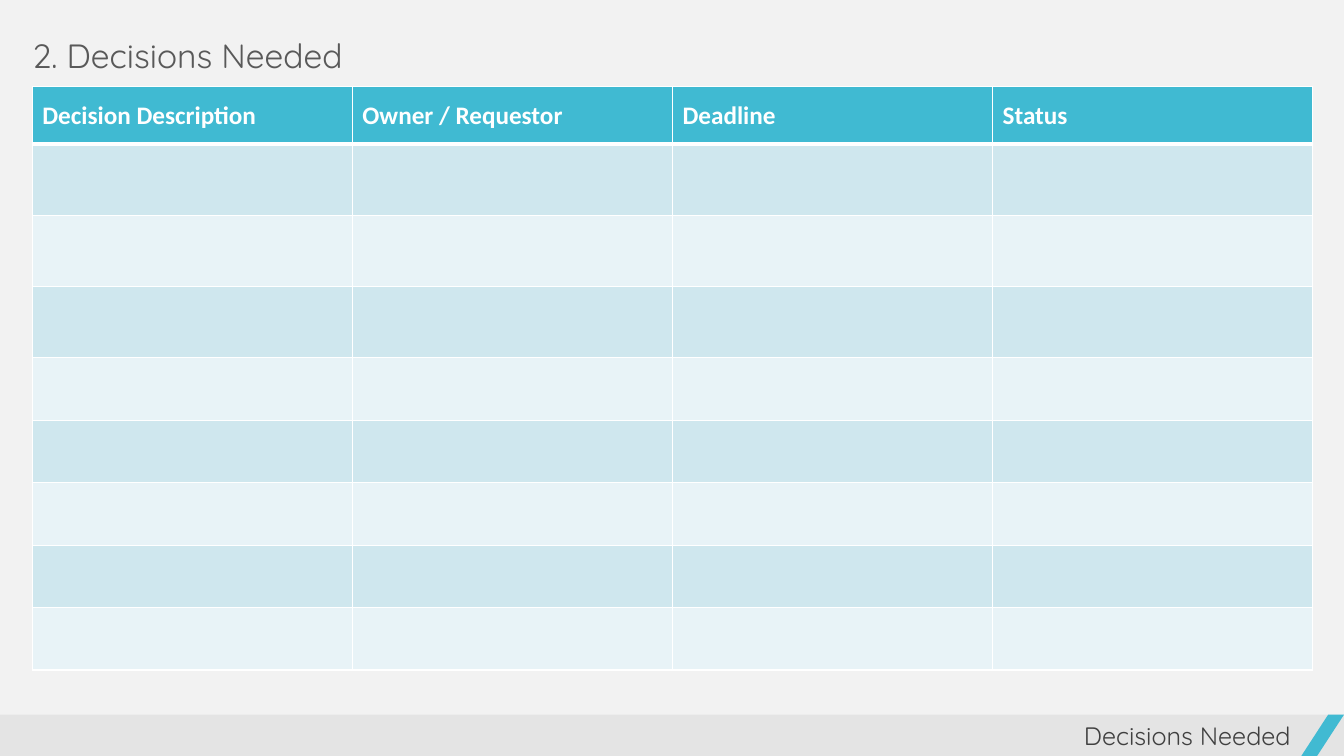
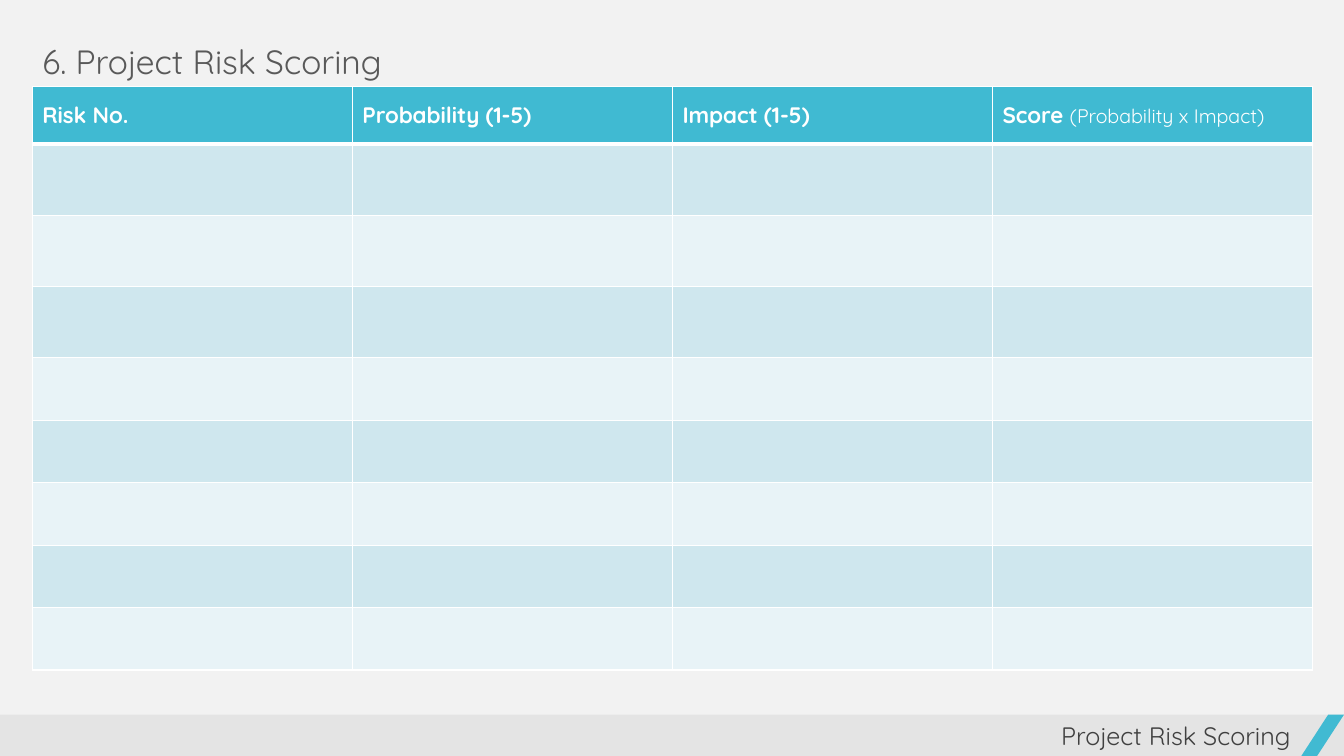
from lxml.etree import SubElement
from pptx import Presentation
from pptx.dml.color import RGBColor
from pptx.enum.shapes import MSO_SHAPE
from pptx.enum.text import MSO_ANCHOR, MSO_AUTO_SIZE, PP_ALIGN
from pptx.oxml.ns import qn
from pptx.util import Inches, Pt

# Shared look
SLIDE_W, SLIDE_H = 13.33, 7.5
BACKGROUND, BAND, ACCENT, WHITE = "F2F2F2", "E4E4E4", "41BAD2", "FFFFFF"
HEADER_FILL, ROW_FILLS = "40BAD2", ("CFE7EE", "E8F3F7")
TITLE_COLOR, FOOTER_COLOR = "595959", "404040"
FONT = "Quicksand"

TITLE_SIZE = (9.84, 0.5)
TABLE_BOX = (0.32, 0.86, 12.7)
ROW_HEIGHTS = [0.57, 0.71, 0.7, 0.71] + [0.62] * 5
FOOTER_BOX = (0, 7.09, SLIDE_W, 0.42)


def rgb(hex_color):
    return RGBColor.from_string(hex_color)


def add_run(paragraph, text, size, color, font=FONT, bold=False):
    run = paragraph.add_run()
    run.text = text
    run.font.name, run.font.size, run.font.bold = font, Pt(size), bold
    run.font.color.rgb = rgb(color)


def add_title(slide, text, left, top):
    title = slide.shapes.title
    title.left, title.top = Inches(left), Inches(top)
    title.width, title.height = (Inches(side) for side in TITLE_SIZE)
    frame = title.text_frame
    frame.word_wrap = True
    frame.auto_size = MSO_AUTO_SIZE.NONE
    frame.vertical_anchor = MSO_ANCHOR.TOP
    frame.paragraphs[0].alignment = PP_ALIGN.LEFT
    add_run(frame.paragraphs[0], text, 24, TITLE_COLOR)


def set_borders(cell, top, bottom):
    """Draw white borders; the lines must come before the fill."""
    properties = cell._tc.get_or_add_tcPr()
    widths = {"a:lnL": 1, "a:lnR": 1, "a:lnT": top, "a:lnB": bottom}
    for position, (tag, width) in enumerate(widths.items()):
        line = SubElement(properties, qn(tag), w=str(Pt(width)))
        fill = SubElement(line, qn("a:solidFill"))
        SubElement(fill, qn("a:srgbClr"), val=WHITE)
        properties.insert(position, line)


def add_log_table(slide, headers, size, font, box):
    """Header row over empty striped rows; each header is a list of runs."""
    left, top, width = box
    table = slide.shapes.add_table(
        len(ROW_HEIGHTS), len(headers), Inches(left), Inches(top),
        Inches(width), Inches(sum(ROW_HEIGHTS))).table
    table.first_row = table.horz_banding = False
    for column in table.columns:
        column.width = Inches(width / len(headers))
    for index, (row, height) in enumerate(zip(table.rows, ROW_HEIGHTS)):
        row.height = Inches(height)
        for cell in row.cells:
            cell.fill.solid()
            cell.fill.fore_color.rgb = rgb(
                ROW_FILLS[(index - 1) % 2] if index else HEADER_FILL)
            set_borders(cell, top=3 if index == 1 else 1,
                        bottom=1 if index else 3)
    # Header text: a bold label, then an optional lighter note
    for cell, (label, *notes) in zip(table.rows[0].cells, headers):
        cell.vertical_anchor = MSO_ANCHOR.MIDDLE
        paragraph = cell.text_frame.paragraphs[0]
        add_run(paragraph, label, size, WHITE, font, bold=True)
        for note in notes:
            add_run(paragraph, note, size - 2, WHITE, font)


def add_block(slide, preset, color, left, top, width, height):
    block = slide.shapes.add_shape(
        preset, Inches(left), Inches(top), Inches(width), Inches(height))
    block.shadow.inherit = False
    block.fill.solid()
    block.fill.fore_color.rgb = rgb(color)
    block.line.fill.background()
    return block


def add_footer(slide, text, box):
    left, top, width, height = box
    slash_w, label_w = 0.43, 7.6
    slash_left = left + width - slash_w
    add_block(slide, MSO_SHAPE.RECTANGLE, BAND, *box)
    slash = add_block(slide, MSO_SHAPE.PARALLELOGRAM, ACCENT,
                      slash_left, top, slash_w, height)
    slash.adjustments[0] = 0.65
    # Section name, right-aligned against the slash
    label = slide.shapes.add_textbox(
        Inches(slash_left - label_w), Inches(top + 0.01),
        Inches(label_w), Inches(0.4))
    label.text_frame.word_wrap = True
    paragraph = label.text_frame.paragraphs[0]
    paragraph.alignment = PP_ALIGN.RIGHT
    add_run(paragraph, text, 18, FOOTER_COLOR)


def add_log_slide(prs, number, name, title_at, headers, size, font):
    slide = prs.slides.add_slide(prs.slide_layouts[5])
    slide.background.fill.solid()
    slide.background.fill.fore_color.rgb = rgb(BACKGROUND)
    add_title(slide, f"{number}. {name}", *title_at)
    add_log_table(slide, headers, size, font, TABLE_BOX)
    add_footer(slide, name, FOOTER_BOX)


def main():
    prs = Presentation()
    prs.slide_width, prs.slide_height = Inches(SLIDE_W), Inches(SLIDE_H)
    add_log_slide(
        prs, 2, "Decisions Needed", (0.22, 0.3),
        [["Decision Description"], ["Owner / Requestor"], ["Deadline"],
         ["Status"]], 18, "Calibri")
    add_log_slide(
        prs, 6, "Project Risk Scoring", (0.32, 0.36),
        [["Risk No."], ["Probability (1-5)"], ["Impact (1-5)"],
         ["Score ", "(Probability x Impact)"]], 16, FONT)
    prs.save("out.pptx")


if __name__ == "__main__":
    main()
